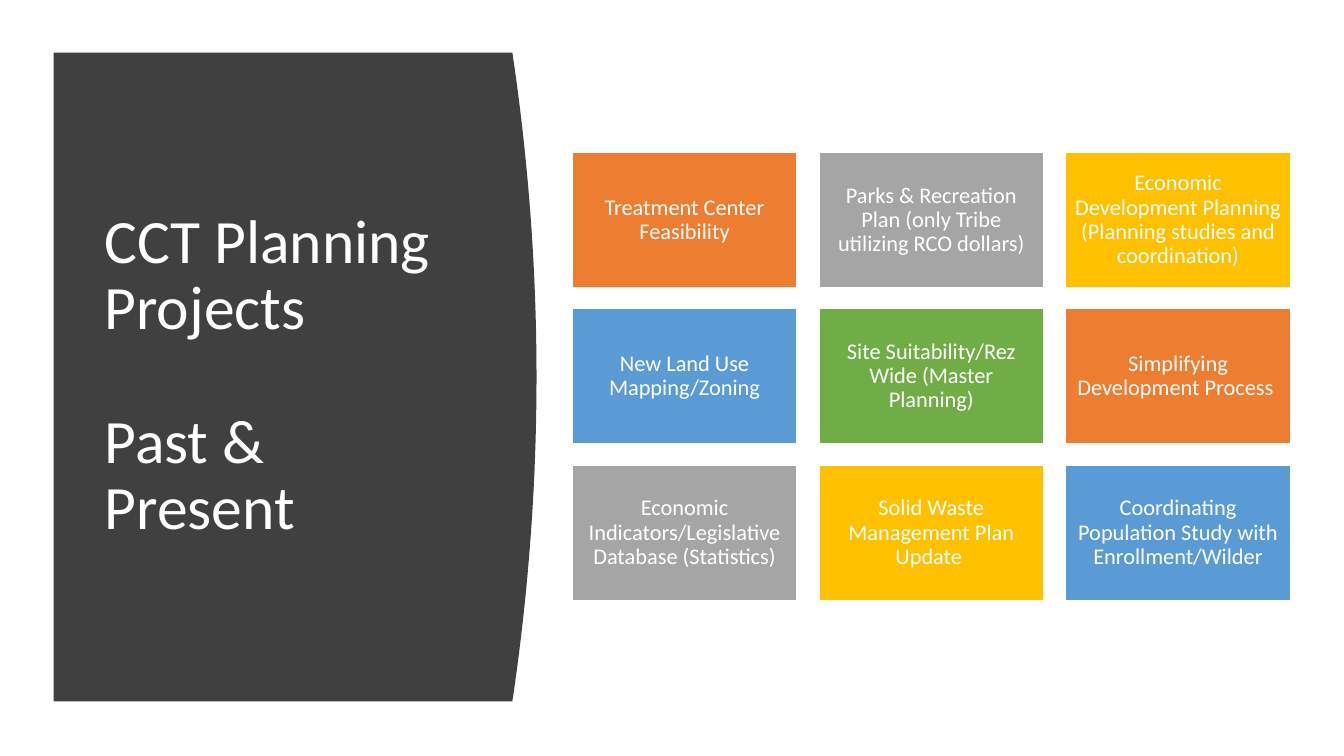
from pptx import Presentation
from pptx.dml.color import RGBColor
from pptx.enum.shapes import MSO_SHAPE
from pptx.enum.text import MSO_ANCHOR, MSO_AUTO_SIZE, PP_ALIGN
from pptx.util import Emu, Pt

EMU_PER_PX = 9525  # 96 px to the inch
FONT = "Calibri"
COLORS = {
    "white": "FFFFFF",
    "charcoal": "404040",
    "orange": "ED7D31",
    "gray": "A5A5A5",
    "gold": "FFC000",
    "blue": "5B9BD5",
    "green": "70AD47",
}

TITLE = ["CCT Planning Projects", "Past &\vPresent"]
PROJECTS = [
    ("Treatment Center Feasibility", "orange"),
    ("Parks & Recreation Plan (only Tribe utilizing RCO dollars)", "gray"),
    ("Economic Development Planning (Planning studies and coordination)", "gold"),
    ("New Land Use Mapping/Zoning", "blue"),
    ("Site Suitability/Rez Wide (Master Planning)", "green"),
    ("Simplifying Development Process ", "orange"),
    ("Economic Indicators/Legislative Database (Statistics)", "gray"),
    ("Solid Waste Management Plan Update ", "gold"),
    ("Coordinating Population Study with Enrollment/Wilder", "blue"),
]

# Project grid
COLUMNS = 3
GRID_LEFT, GRID_TOP = 545, 145
TILE_WIDTH, TILE_HEIGHT = 214, 129
COLUMN_STEP, ROW_STEP = 235, 149


def px(length):
    return Emu(round(length * EMU_PER_PX))


def color(name):
    return RGBColor.from_string(COLORS[name])


def format_paragraph(para, size, align):
    para.alignment = align
    para.line_spacing = 0.9
    para.font.name = FONT
    para.font.size = Pt(size)
    para.font.color.rgb = color("white")


def add_panel(page, left, top, right, bottom, bulge, steps=40):
    """Dark panel whose right side bows outwards as a parabola."""
    curve = []
    for step in range(steps + 1):
        part = step / steps
        x = right + bulge * 4 * part * (1 - part)
        curve.append((px(x), px(top + (bottom - top) * part)))
    outline = page.shapes.build_freeform(px(left), px(top))
    outline.add_line_segments(curve + [(px(left), px(bottom))], close=True)
    panel = outline.convert_to_shape()
    panel.shadow.inherit = False
    panel.fill.solid()
    panel.fill.fore_color.rgb = color("charcoal")
    panel.line.fill.background()
    return panel


def set_title(title, left, top, width, height):
    title.left, title.top = px(left), px(top)
    title.width, title.height = px(width), px(height)
    frame = title.text_frame
    frame.word_wrap = True
    frame.auto_size = MSO_AUTO_SIZE.NONE
    frame.vertical_anchor = MSO_ANCHOR.MIDDLE
    frame.text = "\n".join(TITLE)
    for para in frame.paragraphs:
        format_paragraph(para, 44, PP_ALIGN.LEFT)
        para.space_before = Pt(0)
    frame.paragraphs[-1].space_before = Pt(48)


def add_tile(page, left, top, text, fill):
    tile = page.shapes.add_shape(
        MSO_SHAPE.RECTANGLE, px(left), px(top), px(TILE_WIDTH), px(TILE_HEIGHT))
    tile.shadow.inherit = False
    tile.fill.solid()
    tile.fill.fore_color.rgb = color(fill)
    tile.line.color.rgb = color("white")
    tile.line.width = Pt(1)
    frame = tile.text_frame
    frame.word_wrap = True
    frame.vertical_anchor = MSO_ANCHOR.MIDDLE
    frame.margin_left = frame.margin_right = px(7)
    frame.margin_top = frame.margin_bottom = px(7)
    frame.text = text
    format_paragraph(frame.paragraphs[0], 16, PP_ALIGN.CENTER)


def main():
    deck = Presentation()
    deck.slide_width, deck.slide_height = px(1280), px(720)
    page = deck.slides.add_slide(deck.slide_layouts[5])

    # Panel behind the title
    title = page.shapes.title
    panel = add_panel(page, 51, 50, 488, 668, 23)
    title._element.addprevious(panel._element)
    set_title(title, 90, 107, 359, 503)

    # Project tiles
    for index, (text, fill) in enumerate(PROJECTS):
        row, column = divmod(index, COLUMNS)
        add_tile(page, GRID_LEFT + column * COLUMN_STEP,
                 GRID_TOP + row * ROW_STEP, text, fill)

    deck.save("out.pptx")


if __name__ == "__main__":
    main()
